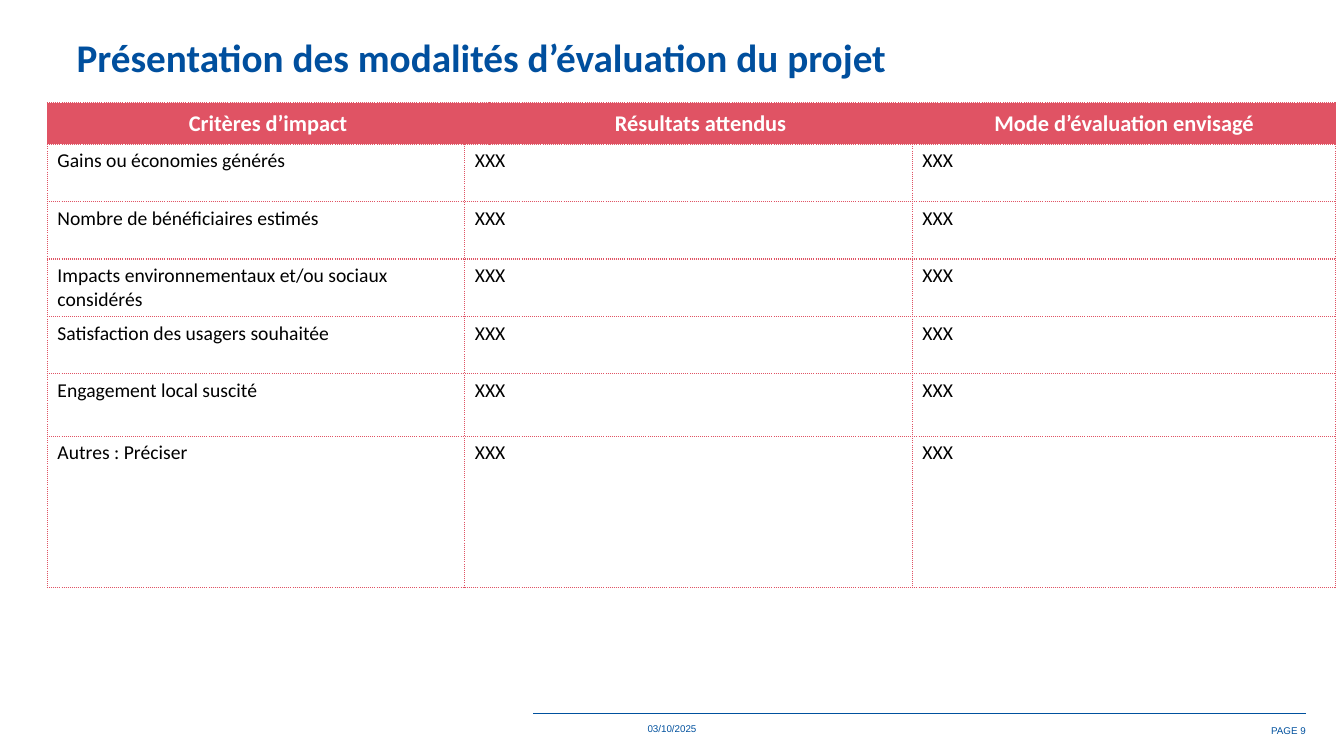
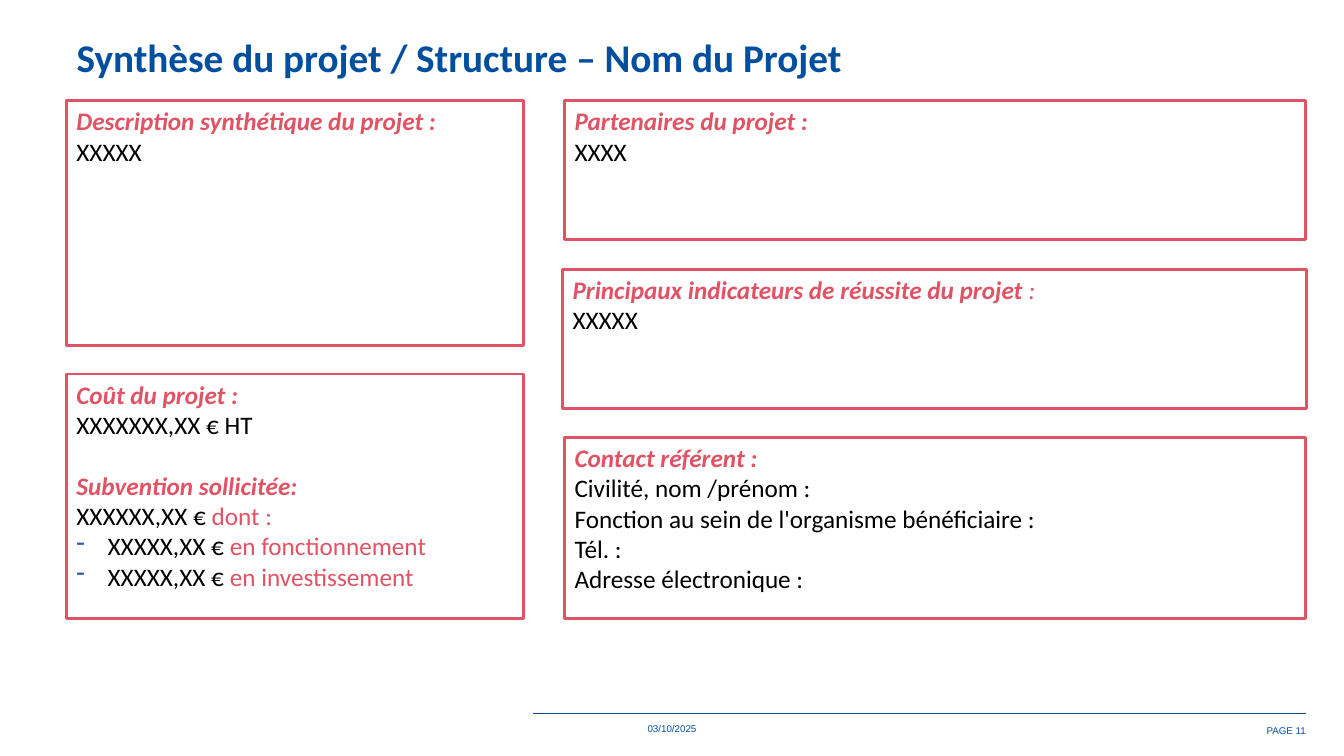
from lxml.etree import SubElement
from pptx import Presentation
from pptx.dml.color import RGBColor
from pptx.enum.shapes import MSO_CONNECTOR, MSO_SHAPE
from pptx.enum.text import MSO_ANCHOR, MSO_AUTO_SIZE, PP_ALIGN
from pptx.oxml import parse_xml
from pptx.oxml.ns import nsdecls, qn
from pptx.util import Inches, Pt

RED, BLUE, TITLE_BLUE = "E05364", "00519E", "004F9E"
BULLET_BLUE, WHITE, BLACK = "2D5AA9", "FFFFFF", "000000"


def color(value):
    return RGBColor.from_string(value)


def style(font, size, value, bold=False, italic=False, name="Calibri"):
    font.name = name
    font.size = Pt(size)
    font.color.rgb = color(value)
    font.bold = bold
    font.italic = italic


presentation = Presentation()
presentation.slide_width = Inches(13.33)
presentation.slide_height = Inches(7.5)

slides = []
for title_text, page in [
    ("Présentation des modalités d’évaluation du projet", 9),
    ("Synthèse du projet / Structure – Nom du Projet", 11),
]:
    slide = presentation.slides.add_slide(presentation.slide_layouts[5])
    slides.append(slide)

    title = slide.shapes.title
    title.left, title.top = Inches(0.66), Inches(0.28)
    title.width, title.height = Inches(11.77), Inches(0.57)
    frame = title.text_frame
    frame.text = title_text
    frame.word_wrap = True
    frame.auto_size = MSO_AUTO_SIZE.NONE
    frame.vertical_anchor = MSO_ANCHOR.TOP
    frame.paragraphs[0].alignment = PP_ALIGN.LEFT
    style(frame.paragraphs[0].runs[0].font, 28, TITLE_BLUE, bold=True)

    rule = slide.shapes.add_connector(
        MSO_CONNECTOR.STRAIGHT, Inches(5.29), Inches(7.08), Inches(12.95), Inches(7.08)
    )
    rule.line.color.rgb = color(BLUE)
    rule.line.width = Pt(0.75)
    SubElement(rule._element.spPr, qn("a:effectLst"))

    for text, left, top, width, alignment, right_inset, anchor in [
        ("03/10/2025", 6.38, 7.13, 0.57, PP_ALIGN.CENTER, 0.04, MSO_ANCHOR.TOP),
        (f"PAGE {page}", 12.44, 7.15, 0.51, PP_ALIGN.RIGHT, 0, MSO_ANCHOR.MIDDLE),
    ]:
        footer = slide.shapes.add_textbox(
            Inches(left), Inches(top), Inches(width), Inches(0.2)
        )
        frame = footer.text_frame
        frame.text = text
        frame.word_wrap = False
        frame.vertical_anchor = anchor
        frame.margin_left = frame.margin_top = frame.margin_bottom = Inches(0.04)
        frame.margin_right = Inches(right_inset)
        frame.paragraphs[0].alignment = alignment
        style(frame.paragraphs[0].runs[0].font, 7, BLUE, name="Arial")

evaluation_slide, summary_slide = slides

headers = ["Critères d’impact", "", "Résultats attendus", "Mode d’évaluation envisagé"]
criteria = [
    "Gains ou économies générés",
    "Nombre de bénéficiaires estimés",
    "Impacts environnementaux et/ou sociaux considérés",
    "Satisfaction des usagers souhaitée",
    "Engagement local suscité",
    "Autres : Préciser",
]
rows = [headers] + [[criterion, "XXX", "", "XXX"] for criterion in criteria]
column_widths = [4.14, 0.13, 4.2, 4.2]
row_heights = [0.41, 0.57, 0.57, 0.57, 0.57, 0.62, 1.5]

table = evaluation_slide.shapes.add_table(
    len(rows), len(column_widths), Inches(0.47), Inches(1.02),
    Inches(sum(column_widths)), Inches(sum(row_heights)),
).table
for column, width in zip(table.columns, column_widths):
    column.width = Inches(width)
for row, height in zip(table.rows, row_heights):
    row.height = Inches(height)

for row_index, texts in enumerate(rows):
    is_header = row_index == 0
    for column_index, text in enumerate(texts):
        cell = table.cell(row_index, column_index)
        properties = cell._tc.get_or_add_tcPr()
        for side in ("lnL", "lnR", "lnT", "lnB"):
            properties.append(parse_xml(
                f'<a:{side} {nsdecls("a")} w="12700"><a:solidFill>'
                f'<a:srgbClr val="{RED}"/></a:solidFill>'
                f'<a:prstDash val="sysDot"/></a:{side}>'
            ))
        cell.fill.solid()
        cell.fill.fore_color.rgb = color(RED if is_header else WHITE)
        cell.vertical_anchor = MSO_ANCHOR.MIDDLE if is_header else MSO_ANCHOR.TOP
        paragraph = cell.text_frame.paragraphs[0]
        paragraph.text = text
        paragraph.alignment = PP_ALIGN.CENTER if is_header else PP_ALIGN.LEFT
        if is_header:
            style(paragraph.font, 16, WHITE, bold=True)
        else:
            style(paragraph.font, 14, BLACK)
        for run in paragraph.runs:
            if is_header:
                style(run.font, 16, WHITE, bold=True)
            else:
                style(run.font, 14, BLACK)
    first_column = 0 if is_header else 1
    table.cell(row_index, first_column).merge(table.cell(row_index, first_column + 1))

HEADING, PLAIN, ACCENT = (RED, True, True), (BLACK, False, False), (RED, False, False)
LIGHT_HEADING = (RED, False, True)
boxes = [
    (0.66, 3.71, 4.53, 2.43, [
        [("Coût du projet :", HEADING)],
        [("XXXXXXX,XX € HT", PLAIN)],
        [("Subvention sollicitée:", HEADING)],
        [("XXXXXX,XX € ", PLAIN), ("dont :", ACCENT)],
        [("XXXXX,XX € ", PLAIN), ("en fonctionnement", ACCENT)],
        [("XXXXX,XX € ", PLAIN), ("en investissement", ACCENT)],
    ]),
    (5.6, 4.34, 7.35, 1.8, [
        [("Contact référent :", HEADING)],
        [("Civilité, nom /prénom :", PLAIN)],
        [("Fonction au sein de l'organisme bénéficiaire :", PLAIN)],
        [("Tél. :", PLAIN)],
        [("Adresse électronique :", PLAIN)],
    ]),
    (0.66, 1, 4.53, 2.43, [
        [("Description synthétique du projet :", HEADING)],
        [("XXXXX", PLAIN)],
    ]),
    (5.6, 1, 7.35, 1.38, [
        [("Partenaires du projet :", HEADING)],
        [("XXXX", PLAIN)],
    ]),
    (5.58, 2.67, 7.38, 1.38, [
        [("Principaux indicateurs de réussite du projet ", HEADING), (":", LIGHT_HEADING)],
        [("XXXXX", PLAIN)],
    ]),
]

for left, top, width, height, lines in boxes:
    box = summary_slide.shapes.add_shape(
        MSO_SHAPE.RECTANGLE, Inches(left), Inches(top), Inches(width), Inches(height)
    )
    box.shadow.inherit = False
    box.fill.solid()
    box.fill.fore_color.rgb = color(WHITE)
    box.line.color.rgb = color(RED)
    box.line.width = Pt(2)
    frame = box.text_frame
    frame.word_wrap = True
    frame.vertical_anchor = MSO_ANCHOR.TOP
    for index, line in enumerate(lines):
        paragraph = frame.add_paragraph() if index else frame.paragraphs[0]
        paragraph.alignment = PP_ALIGN.LEFT
        if index and line[0][1] == HEADING:
            paragraph.space_before = Pt(22)
        if line[-1][0].startswith("en "):
            properties = paragraph._p.get_or_add_pPr()
            properties.set("marL", str(Inches(0.31)))
            properties.set("indent", str(-Inches(0.31)))
            bullet_color = SubElement(properties, qn("a:buClr"))
            SubElement(bullet_color, qn("a:srgbClr")).set("val", BULLET_BLUE)
            SubElement(properties, qn("a:buChar")).set("char", "-")
        for text, (value, bold, italic) in line:
            run = paragraph.add_run()
            run.text = text
            style(run.font, 18, value, bold, italic)

presentation.save("out.pptx")
